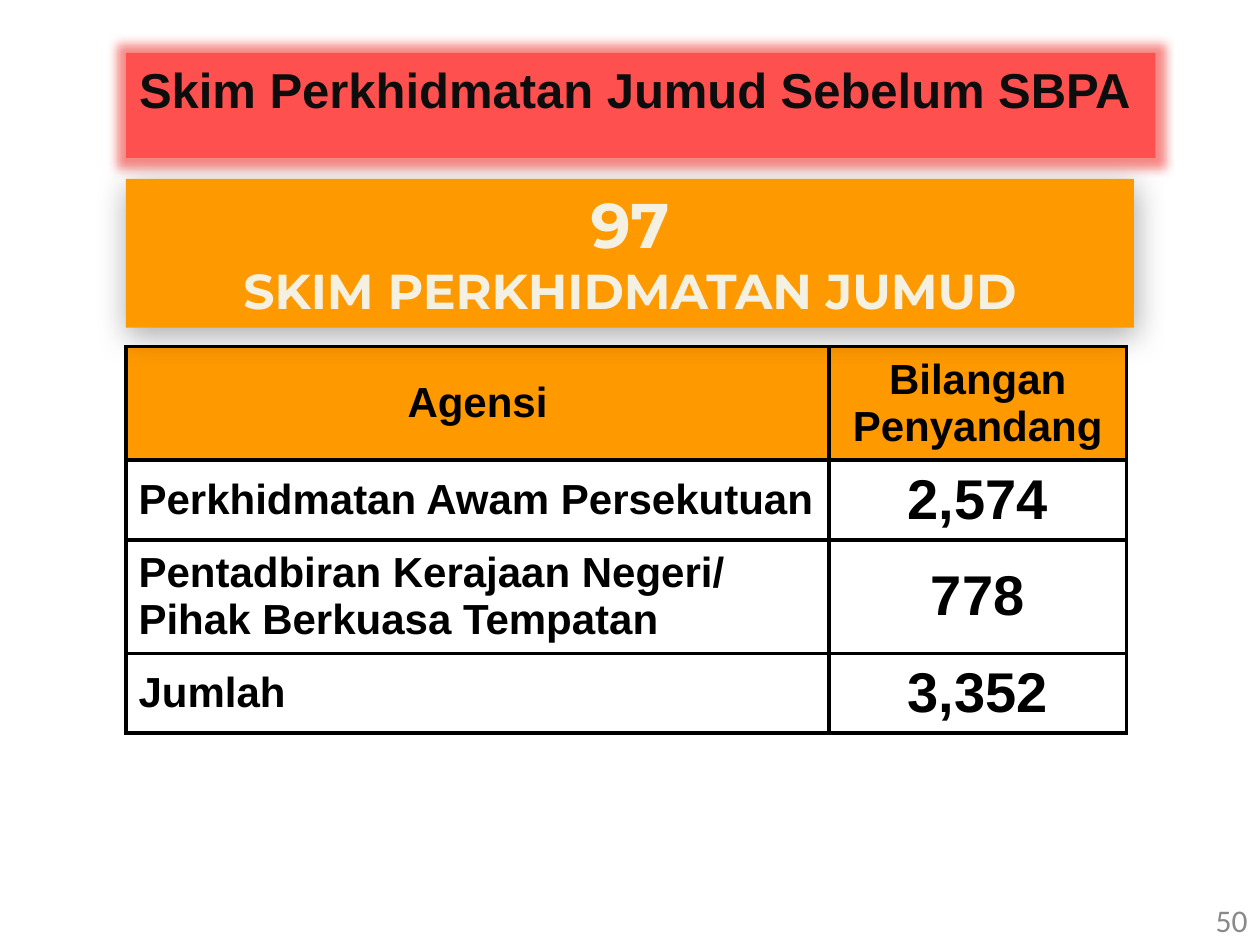
from lxml import etree
from pptx import Presentation
from pptx.dml.color import RGBColor
from pptx.enum.shapes import MSO_SHAPE
from pptx.enum.text import MSO_ANCHOR, MSO_AUTO_SIZE, PP_ALIGN
from pptx.oxml import parse_xml
from pptx.oxml.ns import nsdecls, qn
from pptx.util import Inches, Pt

LEFT, CENTER, RIGHT = PP_ALIGN.LEFT, PP_ALIGN.CENTER, PP_ALIGN.RIGHT
MIDDLE, TOP = MSO_ANCHOR.MIDDLE, MSO_ANCHOR.TOP
FIT_SHAPE = MSO_AUTO_SIZE.SHAPE_TO_FIT_TEXT
RECTANGLE = MSO_SHAPE.RECTANGLE
TITLE_ONLY = 5

COLORS = {
    "black": "000000",
    "white": "FFFFFF",
    "orange": "FF9900",
    "red": "FF5050",
    "glow": "EE3B36",
    "cream": "F4F1E3",
    "title": "0D0D0D",
    "number": "898989",
}
ROWS = [
    (["Agensi"], "Bilangan Penyandang"),
    (["Perkhidmatan Awam Persekutuan"], "2,574"),
    (["Pentadbiran Kerajaan Negeri/", "Pihak Berkuasa Tempatan"], "778"),
    (["Jumlah"], "3,352"),
]
COLUMN_WIDTHS = [5.58, 2.36]
ROW_HEIGHTS = [0.9, 0.63, 0.9, 0.63]


def paint(fill, color):
    fill.solid()
    fill.fore_color.rgb = RGBColor.from_string(COLORS[color])


def write_lines(text_frame, lines, align, color, font="Arial", bold=True):
    text_frame.word_wrap = True
    for index, (text, size) in enumerate(lines):
        paragraph = text_frame.paragraphs[0] if index == 0 else text_frame.add_paragraph()
        paragraph.alignment = align
        run = paragraph.add_run()
        run.text = text
        run.font.name = font
        run.font.size = Pt(size)
        run.font.bold = bold
        run.font.color.rgb = RGBColor.from_string(COLORS[color])


def add_effect(shape, effect):
    properties = shape._element.spPr
    for old in properties.findall(qn("a:effectLst")):
        properties.remove(old)
    properties.append(parse_xml(f'<a:effectLst {nsdecls("a")}>{effect}</a:effectLst>'))


def outline_text(text_frame):
    for paragraph in text_frame.paragraphs:
        for run in paragraph.runs:
            run.font._element.insert(0, parse_xml(
                f'<a:ln {nsdecls("a")} w="{Pt(1)}"><a:solidFill>'
                f'<a:srgbClr val="{COLORS["black"]}"/></a:solidFill></a:ln>'))


def add_title(slide):
    title = slide.shapes.title
    title.left, title.top = Inches(1), Inches(0.42)
    title.width, title.height = Inches(8.17), Inches(0.57)
    paint(title.fill, "red")
    title.line.fill.background()
    title.text_frame.vertical_anchor = TOP
    title.text_frame.auto_size = FIT_SHAPE
    write_lines(title.text_frame, [("Skim Perkhidmatan Jumud Sebelum SBPA ", 28)], CENTER, "title")
    add_effect(title, f'<a:glow rad="{Pt(11)}"><a:srgbClr val="{COLORS["glow"]}">'
                      '<a:alpha val="60000"/></a:srgbClr></a:glow>')


def add_banner(slide):
    banner = slide.shapes.add_shape(RECTANGLE, Inches(1), Inches(1.42), Inches(8), Inches(1.18))
    paint(banner.fill, "orange")
    banner.line.fill.background()
    banner.text_frame.vertical_anchor = TOP
    banner.text_frame.auto_size = FIT_SHAPE
    write_lines(banner.text_frame, [("97", 36), ("SKIM PERKHIDMATAN JUMUD", 28)],
                CENTER, "cream", "Montserrat")
    outline_text(banner.text_frame)
    add_effect(banner, f'<a:outerShdw blurRad="{Pt(17.8)}" dist="{Pt(4)}" dir="{87 * 60000}" '
                       f'algn="ctr" rotWithShape="0"><a:srgbClr val="{COLORS["black"]}">'
                       '<a:alpha val="33000"/></a:srgbClr></a:outerShdw>')


def add_borders(cell):
    properties = cell._tc.get_or_add_tcPr()
    for index, side in enumerate(("lnL", "lnR", "lnT", "lnB")):
        line = etree.Element(qn(f"a:{side}"), w=str(Pt(2.25)))
        fill = etree.SubElement(line, qn("a:solidFill"))
        etree.SubElement(fill, qn("a:srgbClr"), val=COLORS["black"])
        properties.insert(index, line)


def fill_cell(cell, lines, align, background):
    cell.vertical_anchor = MIDDLE
    paint(cell.fill, background)
    write_lines(cell.text_frame, lines, align, "black")
    add_borders(cell)


def add_agency_table(slide):
    table = slide.shapes.add_table(
        len(ROWS), len(COLUMN_WIDTHS), Inches(1), Inches(2.75),
        Inches(sum(COLUMN_WIDTHS)), Inches(sum(ROW_HEIGHTS))).table
    for column, width in zip(table.columns, COLUMN_WIDTHS):
        column.width = Inches(width)
    for index, (agency, count) in enumerate(ROWS):
        table.rows[index].height = Inches(ROW_HEIGHTS[index])
        header = index == 0
        background = "orange" if header else "white"
        fill_cell(table.cell(index, 0), [(line, 24) for line in agency],
                  CENTER if header else LEFT, background)
        fill_cell(table.cell(index, 1), [(count, 24 if header else 32)], CENTER, background)


def add_slide_number(slide):
    box = slide.shapes.add_textbox(Inches(7.67), Inches(7.1), Inches(2.33), Inches(0.4))
    box.text_frame.vertical_anchor = MIDDLE
    write_lines(box.text_frame, [("50", 18)], RIGHT, "number", "Calibri", False)


def main():
    presentation = Presentation()
    presentation.slide_width, presentation.slide_height = Inches(10), Inches(7.5)
    slide = presentation.slides.add_slide(presentation.slide_layouts[TITLE_ONLY])
    add_agency_table(slide)
    add_banner(slide)
    add_title(slide)
    add_slide_number(slide)
    presentation.save("out.pptx")


if __name__ == "__main__":
    main()
